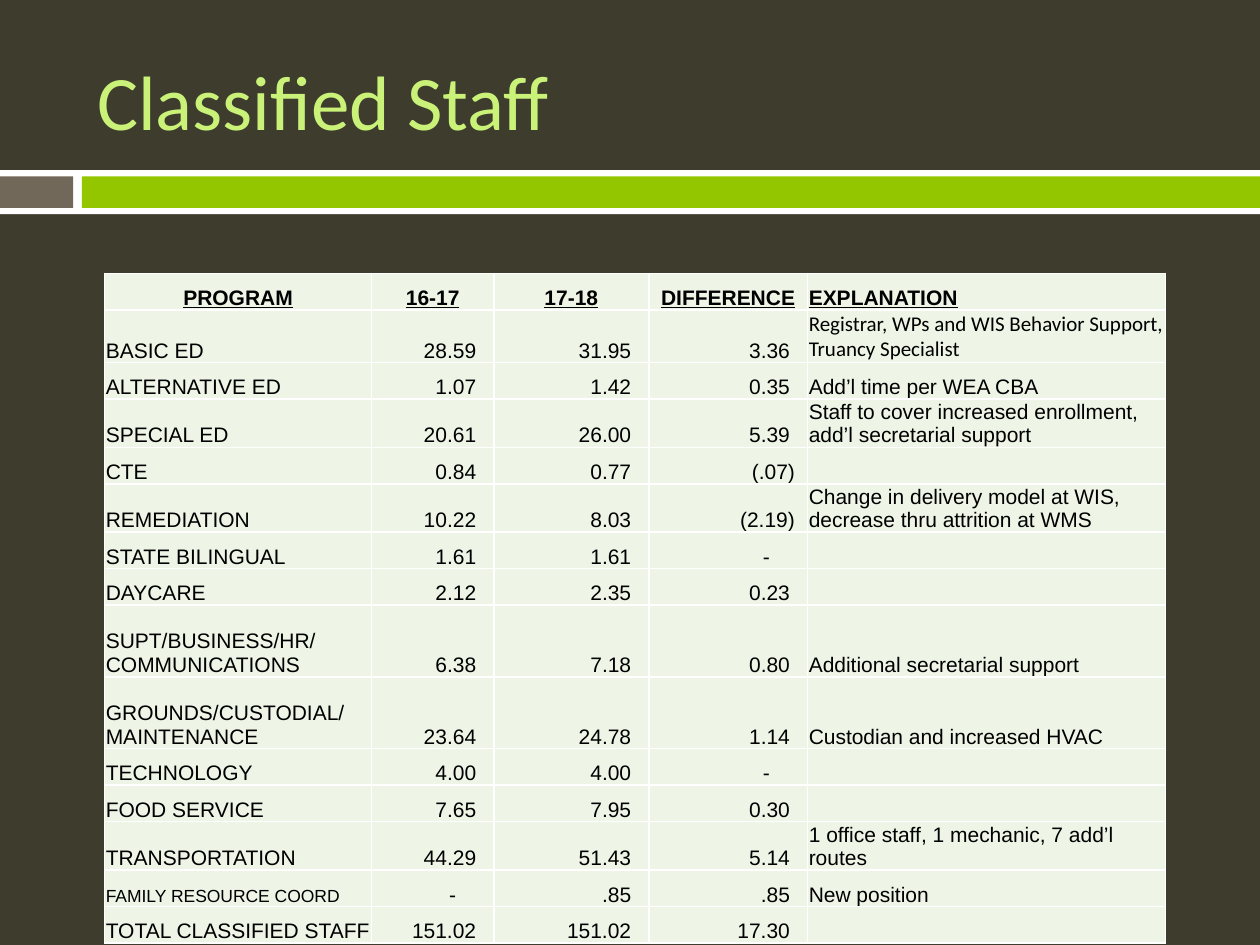
from lxml import etree
from pptx import Presentation
from pptx.dml.color import RGBColor
from pptx.enum import shapes, text
from pptx.oxml.ns import qn
from pptx.util import Inches, Pt

HUES = {
    "back": "3E3D2D", "white": "FFFFFF", "stone": "71685A", "green": "94C600",
    "title": "CAF278", "cell": "EEF5E7", "ink": "000000",
}
TITLE = "Classified Staff"
BANDS = [
    ("white", 0, 1.35, 10, 0.35),
    ("stone", 0, 1.4, 0.58, 0.25),
    ("green", 0.65, 1.4, 9.35, 0.25),
]
WIDTHS = [2.12, 0.97, 1.23, 1.26, 2.84]
ROW, TALL = 0.29, 0.57
ROWS = [
    ("PROGRAM", "16-17", "17-18", "DIFFERENCE", "EXPLANATION"),
    ("BASIC ED", "28.59", "31.95", "3.36",
     "Registrar, WPs and WIS Behavior Support, Truancy Specialist"),
    ("ALTERNATIVE ED", "1.07", "1.42", "0.35", "Add’l time per WEA CBA"),
    ("SPECIAL ED", "20.61", "26.00", "5.39",
     "Staff to cover increased enrollment, add’l secretarial support"),
    ("CTE", "0.84", "0.77", "(.07)", ""),
    ("REMEDIATION", "10.22", "8.03", "(2.19)",
     "Change in delivery model at WIS, decrease thru attrition at WMS"),
    ("STATE BILINGUAL", "1.61", "1.61", "-", ""),
    ("DAYCARE", "2.12", "2.35", "0.23", ""),
    ("SUPT/BUSINESS/HR/COMMUNICATIONS", "6.38", "7.18", "0.80",
     "Additional secretarial support"),
    ("GROUNDS/CUSTODIAL/MAINTENANCE", "23.64", "24.78", "1.14",
     "Custodian and increased HVAC"),
    ("TECHNOLOGY", "4.00", "4.00", "-", ""),
    ("FOOD SERVICE", "7.65", "7.95", "0.30", ""),
    ("TRANSPORTATION", "44.29", "51.43", "5.14",
     "1 office staff, 1 mechanic, 7 add’l routes"),
    ("FAMILY RESOURCE COORD", "-", ".85", ".85", "New position"),
    ("TOTAL CLASSIFIED STAFF", "151.02", "151.02", "17.30", ""),
]
SMALL = {"FAMILY RESOURCE COORD": 10}
FACES = {ROWS[1][4]: "Calibri"}


def hue(name):
    return RGBColor.from_string(HUES[name])


def paint(fill, name):
    fill.solid()
    fill.fore_color.rgb = hue(name)


def style(font, face, size, name):
    font.name, font.size = face, Pt(size)
    font.color.rgb = hue(name)


def edge(cell):
    props = cell._tc.get_or_add_tcPr()
    for side in ("lnL", "lnR", "lnT", "lnB"):
        line = etree.SubElement(props, qn(f"a:{side}"), w=str(Pt(1)))
        fill = etree.SubElement(line, qn("a:solidFill"))
        etree.SubElement(fill, qn("a:srgbClr"), val=HUES["white"])


def inset(words):
    if words == "-":
        return 0.3
    return 0.1 if words.endswith(")") else 0.14


def write(cell, words, head, col):
    edge(cell)
    paint(cell.fill, "cell")
    cell.vertical_anchor = text.MSO_ANCHOR.BOTTOM
    cell.margin_left = cell.margin_right = cell.margin_top = Inches(0.01)
    cell.margin_bottom = 0
    cell.text_frame.text = words
    para = cell.text_frame.paragraphs[0]
    para.alignment = text.PP_ALIGN.LEFT
    if head and col < 4:
        para.alignment = text.PP_ALIGN.CENTER
    elif 0 < col < 4:
        para.alignment = text.PP_ALIGN.RIGHT
        cell.margin_right = Inches(inset(words))
    for run in para.runs:
        style(run.font, FACES.get(words, "Arial"), SMALL.get(words, 12), "ink")
        run.font.bold = run.font.underline = head
    if not words:
        etree.SubElement(para._p, qn("a:endParaRPr"), sz="1200")


def main():
    deck = Presentation()
    deck.slide_width, deck.slide_height = Inches(10), Inches(7.5)
    slide = deck.slides.add_slide(deck.slide_layouts[5])
    paint(slide.background.fill, "back")

    for name, *box in BANDS:
        band = slide.shapes.add_shape(
            shapes.MSO_SHAPE.RECTANGLE, *map(Inches, box))
        band.shadow.inherit = False
        paint(band.fill, name)
        band.line.fill.background()

    title = slide.shapes.title
    title.left, title.top = Inches(0.67), Inches(0.25)
    title.width, title.height = Inches(8.92), Inches(1.08)
    title.text_frame.text = TITLE
    title.text_frame.vertical_anchor = text.MSO_ANCHOR.MIDDLE
    para = title.text_frame.paragraphs[0]
    para.alignment = text.PP_ALIGN.LEFT
    style(para.runs[0].font, "Calibri", 44, "title")

    highs = [TALL if "/" in row[0] else ROW for row in ROWS]
    grid = slide.shapes.add_table(
        len(ROWS), len(WIDTHS), Inches(0.83), Inches(2.17),
        Inches(sum(WIDTHS)), Inches(sum(highs))).table
    for col, width in zip(grid.columns, WIDTHS):
        col.width = Inches(width)
    for r, (row, high) in enumerate(zip(ROWS, highs)):
        grid.rows[r].height = Inches(high)
        for c, words in enumerate(row):
            write(grid.cell(r, c), words, r == 0, c)

    deck.save("out.pptx")


if __name__ == "__main__":
    main()
